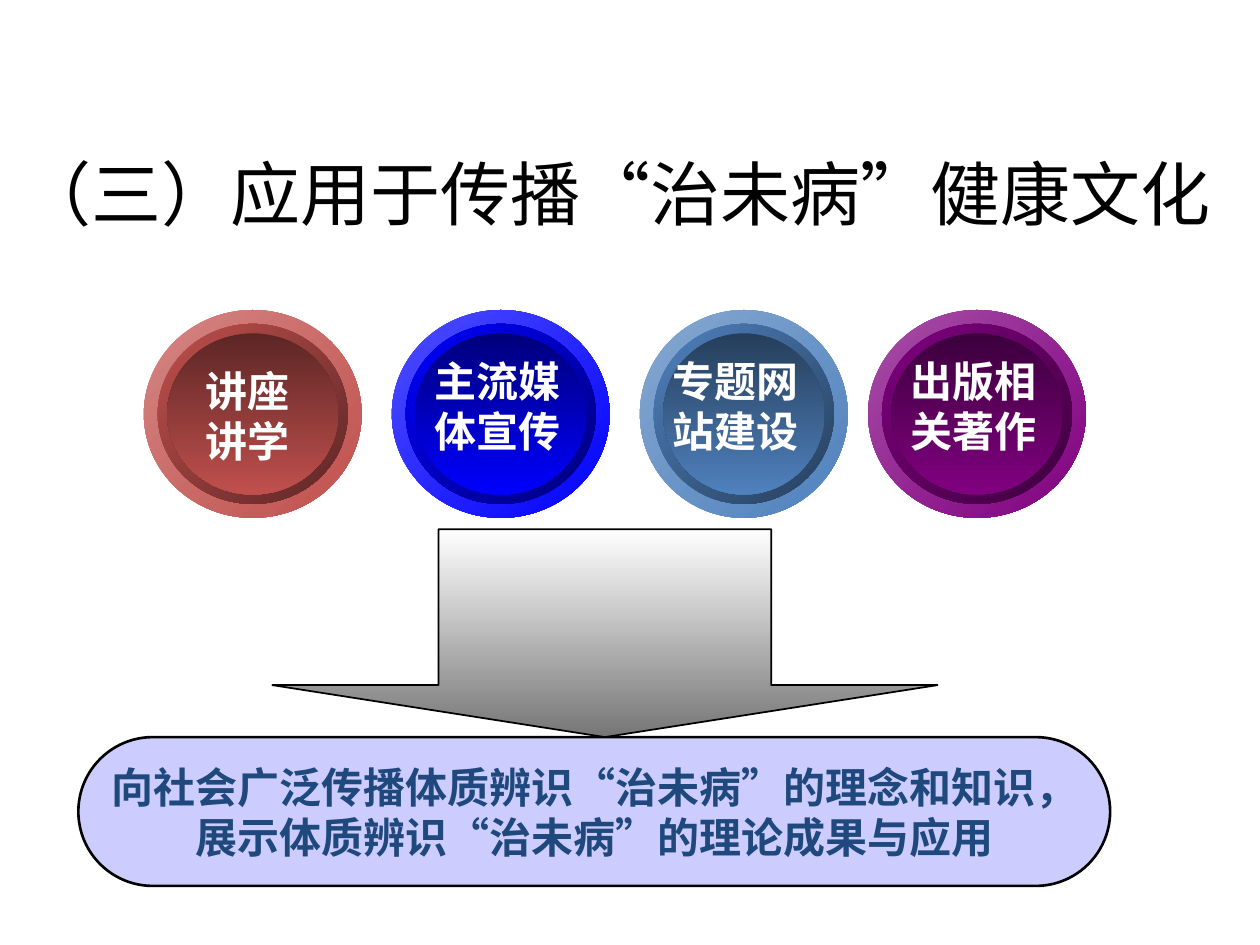
"""Build a slide on spreading the preventive health culture through four channels."""
from itertools import groupby

from pptx import Presentation
from pptx.dml.color import RGBColor
from pptx.enum.shapes import MSO_SHAPE as SHAPE
from pptx.enum.text import MSO_ANCHOR as ANCHOR, MSO_AUTO_SIZE as AUTO, PP_ALIGN as ALIGN
from pptx.util import Cm, Pt

FONT = "Calibri"
BLACK = RGBColor(0x00, 0x00, 0x00)
WHITE = RGBColor(0xFF, 0xFF, 0xFF)
GREY = RGBColor(0x76, 0x76, 0x76)
NAVY = RGBColor(0x1F, 0x49, 0x7D)
LAVENDER = RGBColor(0xCC, 0xCC, 0xFF)
RED = RGBColor(0xC0, 0x50, 0x4D)
BLUE = RGBColor(0x00, 0x00, 0xFF)
STEEL = RGBColor(0x4F, 0x81, 0xBD)
PURPLE = RGBColor(0x80, 0x00, 0x80)


def write(sp, lines, size=24, color=WHITE, bold=True, align=ALIGN.LEFT,
          anchor=ANCHOR.TOP, wrap=False, quote_font=FONT):
    tf = sp.text_frame
    tf.word_wrap = wrap
    tf.vertical_anchor = anchor
    for i, line in enumerate(lines):
        p = tf.add_paragraph() if i else tf.paragraphs[0]
        p.alignment = align
        for font, chars in groupby(line, lambda c: quote_font if c in "“”" else FONT):
            r = p.add_run()
            r.text = "".join(chars)
            r.font.name = font
            r.font.size = Pt(size)
            r.font.bold = bold
            r.font.color.rgb = color


def fill_gradient(sp, start, end, angle):
    sp.shadow.inherit = False
    sp.fill.gradient()
    sp.fill.gradient_angle = 360 - angle
    for stop, color, position in zip(sp.fill.gradient_stops, (start, end), (0, 1)):
        stop.color.rgb = color
        stop.position = position


prs = Presentation()
prs.slide_width, prs.slide_height = Cm(25.4), Cm(19.05)
s = prs.slides.add_slide(prs.slide_layouts[5])

title = s.shapes.title
title.left, title.top, title.width, title.height = Cm(0), Cm(2.59), Cm(24.82), Cm(2.57)
write(title, ["（三）应用于传播“治未病”健康文化"], size=40, color=BLACK, bold=False,
      align=ALIGN.CENTER, anchor=ANCHOR.MIDDLE, wrap=True, quote_font="Arial")

top, height = 6.25, 4.19
channels = [
    (RED, 2.9, 4.39, ["讲座", "讲学"], 3.89, 7.24, 2.21),
    (BLUE, 7.9, 4.39, ["主流媒", "体宣传"], 8.51, 7.04, 3.07),
    (STEEL, 12.9, 4.19, ["专题网站建设"], 13.31, 7.04, 3.4),
    (PURPLE, 17.5, 4.39, ["出版相", "关著作"], 18.11, 7.04, 3.07),
]
for color, left, width, lines, text_left, text_top, text_width in channels:
    light = RGBColor(*(round(v + (255 - v) * 0.31) for v in color))
    dark = RGBColor(*(round(v * 0.48) for v in color))
    group = s.shapes.add_group_shape()
    for inset, start, end, angle in [(0, light, color, 45), (0.28, color, dark, 45),
                                     (0.47, dark, color, 90)]:
        sp = group.shapes.add_shape(SHAPE.OVAL, Cm(left + inset), Cm(top + inset),
                                    Cm(width - 2 * inset), Cm(height - 2 * inset))
        fill_gradient(sp, start, end, angle)
        sp.line.fill.background()
    label = s.shapes.add_textbox(Cm(text_left), Cm(text_top), Cm(text_width), Cm(2.29))
    write(label, lines, wrap=len(lines) == 1)
    label.text_frame.auto_size = AUTO.SHAPE_TO_FIT_TEXT

result = s.shapes.add_shape(SHAPE.ROUNDED_RECTANGLE, Cm(1.58), Cm(14.86), Cm(20.8), Cm(3))
result.adjustments[0] = 0.5
result.shadow.inherit = False
result.fill.solid()
result.fill.fore_color.rgb = LAVENDER
result.line.color.rgb = BLACK
result.line.width = Pt(1.5)
write(result, ["向社会广泛传播体质辨识“治未病”的理念和知识，", "展示体质辨识“治未病”的理论成果与应用"],
      color=NAVY, align=ALIGN.CENTER, anchor=ANCHOR.MIDDLE)

arrow = s.shapes.add_shape(SHAPE.DOWN_ARROW, Cm(5.49), Cm(10.67), Cm(13.41), Cm(4.19))
arrow.adjustments[0] = 0.5
arrow.adjustments[1] = 0.25
fill_gradient(arrow, WHITE, GREY, 90)
arrow.line.color.rgb = BLACK
arrow.line.width = Pt(1)

prs.save("out.pptx")
